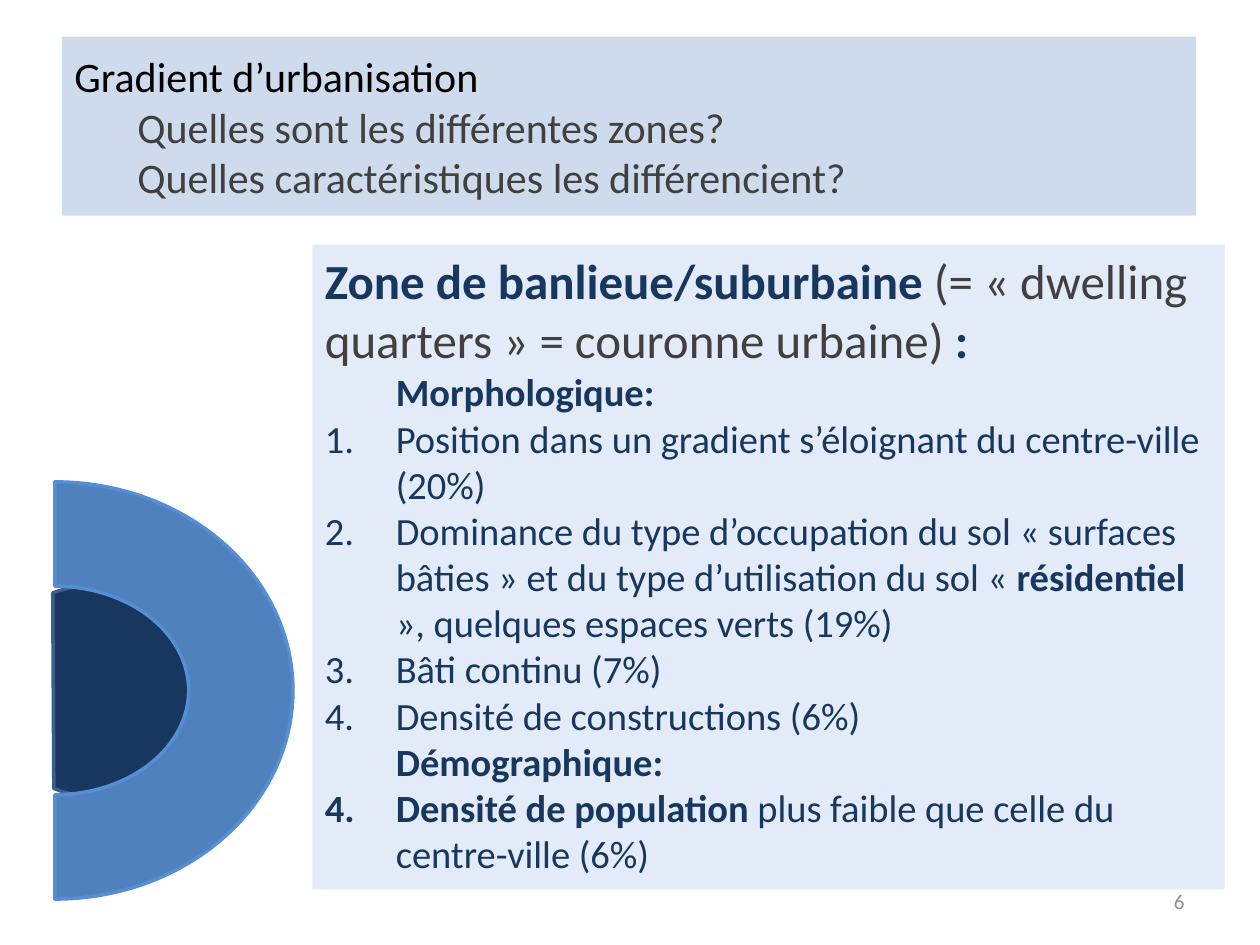
from lxml.etree import SubElement
from pptx import Presentation
from pptx.dml.color import RGBColor
from pptx.enum.shapes import MSO_SHAPE as Shape
from pptx.enum.text import MSO_ANCHOR as Anchor, PP_ALIGN as Align
from pptx.oxml.ns import qn
from pptx.util import Cm, Pt

NAVY, GREY = "17375E", "404040"
INDENT = 1.43


def add_block(kind, box, fill, line=None, opacity=100, rotation=0):
    """Add a flat shape; box is left, top, width, height in cm, opacity in percent."""
    shape = slide.shapes.add_shape(kind, *[Cm(length) for length in box])
    shape.shadow.inherit = False
    shape.rotation = rotation
    shape.fill.solid()
    shape.fill.fore_color.rgb = RGBColor.from_string(fill)
    if opacity < 100:
        color = shape.fill._xPr.find(qn("a:solidFill"))[0]
        SubElement(color, qn("a:alpha"), val=str(opacity * 1000))
    if line:
        shape.line.color.rgb = RGBColor.from_string(line)
        shape.line.width = Pt(2)
    else:
        shape.line.fill.background()
    return shape


def write(shape, runs, size, left=0, number=None, align=Align.LEFT):
    """Append a paragraph of (text, colour, bold) runs; number is its place in a list."""
    frame = shape.text_frame
    frame.word_wrap = True
    paragraph = frame.paragraphs[0]
    if paragraph.runs:
        paragraph = frame.add_paragraph()
    paragraph.alignment = align
    properties = paragraph._p.get_or_add_pPr()
    properties.set("marL", str(Cm(left)))
    if number:
        properties.set("indent", str(-Cm(left)))
        SubElement(properties, qn("a:buFont"), typeface="+mj-lt")
        numbering = SubElement(properties, qn("a:buAutoNum"), type="arabicPeriod")
        if number > 1:
            numbering.set("startAt", str(number))
    for text, color, bold in runs:
        run = paragraph.add_run()
        run.text = text
        run.font.name = "Calibri"
        run.font.size = Pt(size)
        run.font.bold = bold
        run.font.color.rgb = RGBColor.from_string(color)


presentation = Presentation()
presentation.slide_width, presentation.slide_height = Cm(25.4), Cm(19.05)
slide = presentation.slides.add_slide(presentation.slide_layouts[6])

# Town centre and the suburban ring around it
add_block(Shape.CHORD, (-0.28, 11.81, 4.34, 4.24), NAVY, "3A5F8C", rotation=202.3)
add_block(Shape.BLOCK_ARC, (-3.1, 9.12, 8.41, 9.6), "4F81BD", "558ED5", rotation=90)

# Description of the suburban zone
zone = add_block(Shape.RECTANGLE, (6.3, 4.93, 18.39, 13), "C6D9F1", opacity=50)
zone.text_frame.vertical_anchor = Anchor.TOP
write(zone, [
    ("Zone de banlieue/suburbaine ", NAVY, True),
    ("(= « dwelling quarters » = couronne urbaine) ", GREY, False),
    (":", NAVY, True),
], 28)

morphology = [
    [("Position dans un gradient s’éloignant du centre-ville (20%)", NAVY, False)],
    [
        ("Dominance du type d’occupation du sol « surfaces bâties » "
         "et du type d’utilisation du sol « ", NAVY, False),
        ("résidentiel ", NAVY, True),
        ("», quelques espaces verts (19%)", NAVY, False),
    ],
    [("Bâti continu (7%)", NAVY, False)],
    [("Densité de constructions (6%)", NAVY, False)],
]
demography = [
    [
        ("Densité de population ", NAVY, True),
        ("plus faible que celle du centre-ville (6%)", NAVY, False),
    ],
]
for heading, items, start in [
    ("Morphologique:", morphology, 1),
    ("Démographique:", demography, 4),
]:
    write(zone, [(heading, NAVY, True)], 22, INDENT)
    for runs in items:
        write(zone, runs, 22, INDENT, number=start)

# Slide number
number_box = slide.shapes.add_textbox(Cm(18.21), Cm(17.65), Cm(5.92), Cm(1.02))
number_box.text_frame.vertical_anchor = Anchor.MIDDLE
write(number_box, [("6", "8C8C8C", False)], 12, align=Align.RIGHT)

# Title band
header = add_block(Shape.RECTANGLE, (1.25, 0.74, 22.86, 3.61), "B9CDE5", opacity=70)
header.text_frame.vertical_anchor = Anchor.MIDDLE
write(header, [("Gradient d’urbanisation", "000000", False)], 24)
for question in [
    "Quelles sont les différentes zones?",
    "Quelles caractéristiques les différencient?",
]:
    write(header, [(question, GREY, False)], 24, 1.27)

presentation.save("out.pptx")
